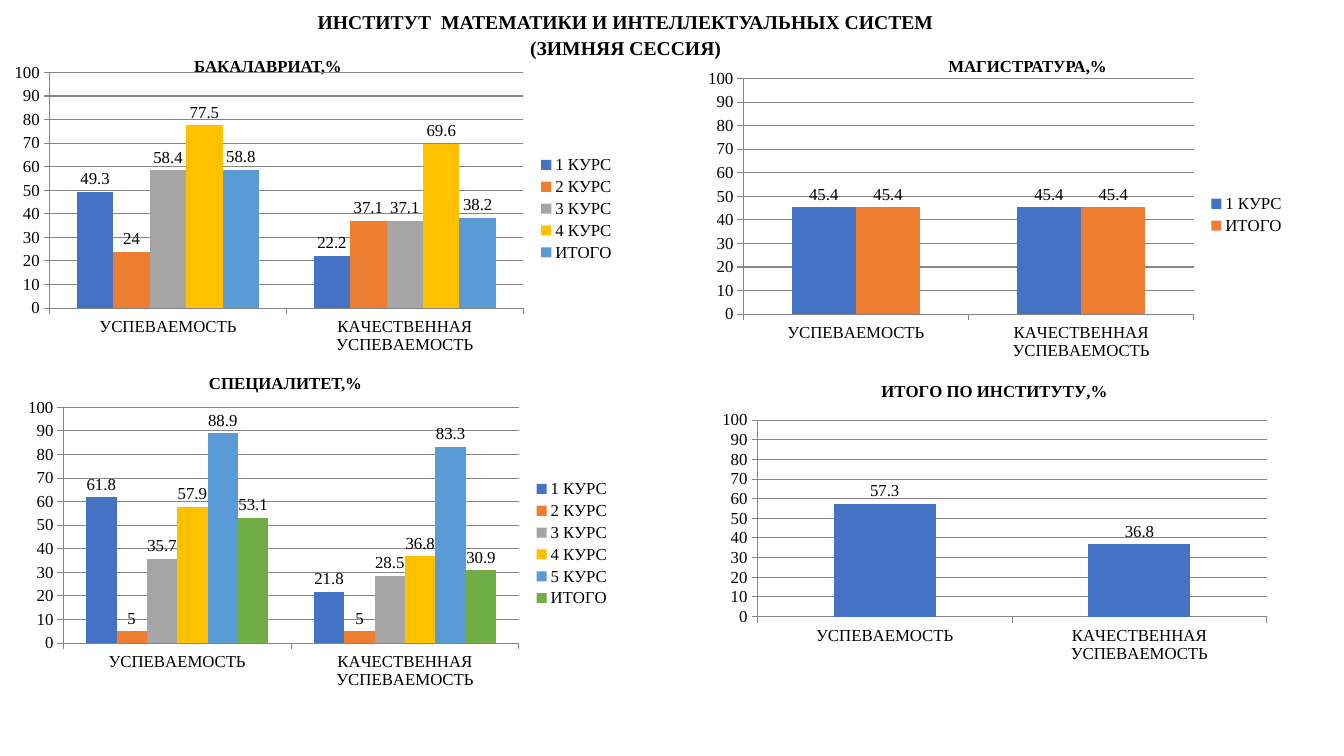
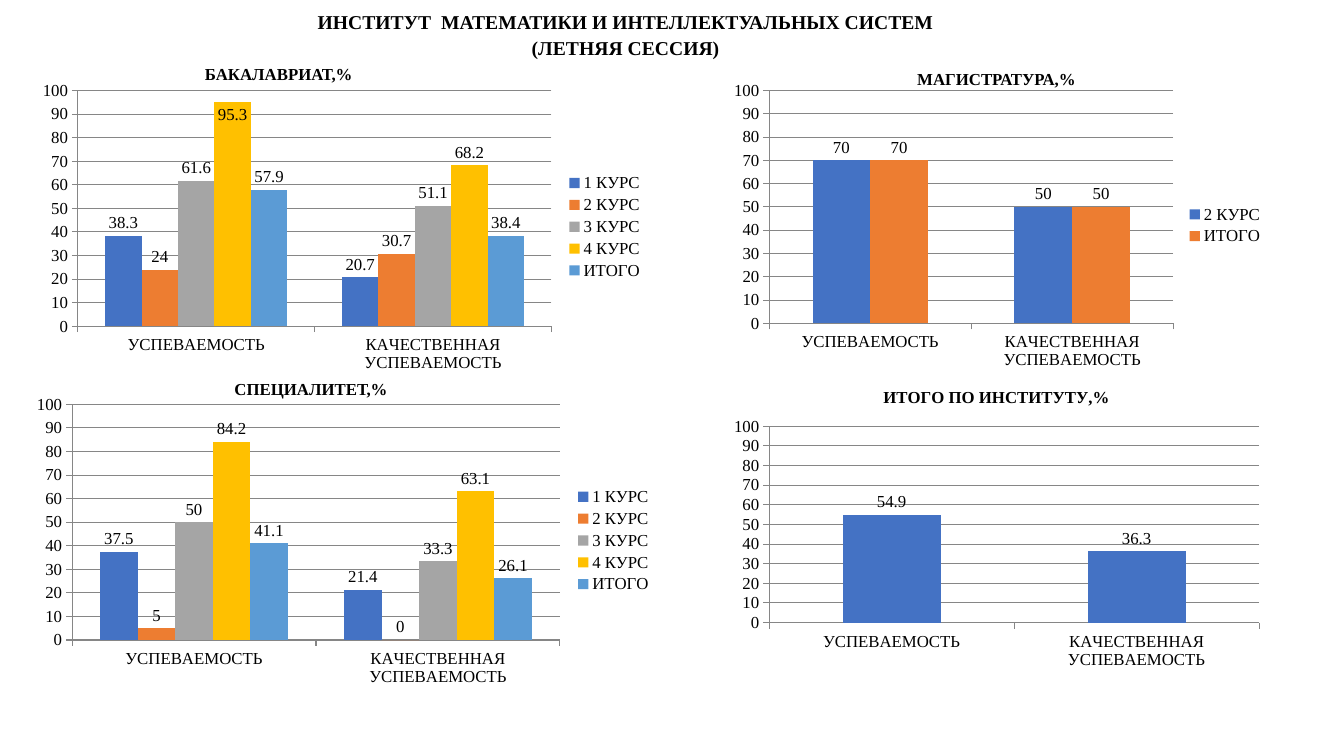
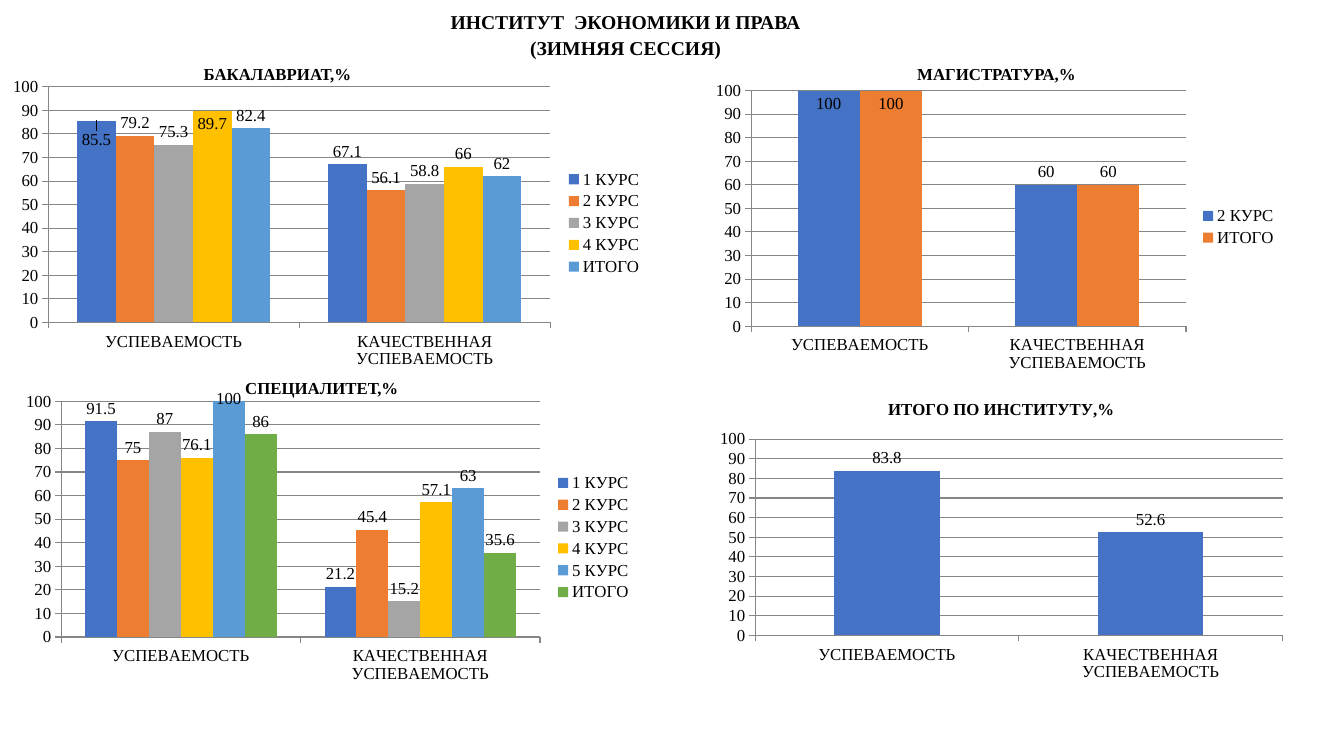
import dataclasses

import lxml.etree
import pptx
import pptx.chart.data
import pptx.dml.color
import pptx.enum.chart
import pptx.enum.text
import pptx.oxml.ns
import pptx.util


@dataclasses.dataclass(frozen=True)
class Theme:
    font: str = "Times New Roman"
    title_size: int = 14
    body_size: int = 12
    line_spacing: float = 1.07
    text: str = "000000"
    grid: str = "868686"
    series: tuple = ("4472C4", "ED7D31", "A5A5A5", "FFC000", "5B9BD5", "70AD47")


theme = Theme()
rgb = pptx.dml.color.RGBColor.from_string
center = pptx.enum.text.PP_ALIGN.CENTER
right = pptx.enum.text.PP_ALIGN.RIGHT

# Deck and grid: 100 columns by 100 rows
deck = pptx.Presentation()
deck.slide_width = pptx.util.Inches(13.33)
deck.slide_height = pptx.util.Inches(7.5)
column = deck.slide_width / 100
row = deck.slide_height / 100

# Shared wording and measures
categories = ("УСПЕВАЕМОСТЬ", "КАЧЕСТВЕННАЯ УСПЕВАЕМОСТЬ")
bachelor, master, specialist = "БАКАЛАВРИАТ,%", "МАГИСТРАТУРА,%", "СПЕЦИАЛИТЕТ,%"
overall = "ИТОГО ПО ИНСТИТУТУ,%"
total = "ИТОГО"
first, second, third, fourth, fifth = [f"{year} КУРС" for year in range(1, 6)]
four_years = (first, second, third, fourth, total)
five_years = (first, second, third, fourth, fifth, total)
title_area = (18.9, 0.5, 55.3, 7)
caption_size = (21.3, 3.5)
math_institute = "ИНСТИТУТ  МАТЕМАТИКИ И ИНТЕЛЛЕКТУАЛЬНЫХ СИСТЕМ"
law_institute = "ИНСТИТУТ  ЭКОНОМИКИ И ПРАВА"
winter, summer = "(ЗИМНЯЯ СЕССИЯ)", "(ЛЕТНЯЯ СЕССИЯ)"

# Captions: text, left, top, alignment
# Charts: area, series names, values per category, inside labels {series: shift down}
reports = [
    {
        "title": (math_institute, winter),
        "captions": [(bachelor, 9.3, 6.5, center), (master, 61.8, 6.5, right),
                     (specialist, 10.6, 48.4, center)],
        "charts": [
            ((0.15, 7.6, 46.4, 40), four_years,
             [(49.3, 24, 58.4, 77.5, 58.8), (22.2, 37.1, 37.1, 69.6, 38.2)], {}),
            ((1.2, 51.9, 45, 40), five_years,
             [(61.8, 5, 35.7, 57.9, 88.9, 53.1), (21.8, 5, 28.5, 36.8, 83.3, 30.9)], {}),
            ((51.8, 8.4, 44.6, 40), (first, total), [(45.4, 45.4), (45.4, 45.4)], {}),
            ((52.9, 48.4, 42.2, 40), ("Series 1",), [(57.3,), (36.8,)], {}),
        ],
    },
    {
        "title": (math_institute, summer),
        "captions": [(bachelor, 10.1, 7.6, center), (master, 63.5, 8.3, center),
                     (specialist, 12.5, 49.2, center)],
        "charts": [
            ((2.25, 10, 46.4, 40), four_years,
             [(38.3, 24, 61.6, 95.3, 57.9), (20.7, 30.7, 51.1, 68.2, 38.4)], {fourth: 0}),
            ((1.8, 51.5, 47.5, 40), four_years,
             [(37.5, 5, 50, 84.2, 41.1), (21.4, 0, 33.3, 63.1, 26.1)], {}),
            ((53.8, 10, 41, 39.6), (second, total), [(70, 70), (50, 50)], {}),
            ((53.8, 49.2, 40.7, 40), ("Series 1",), [(54.9,), (36.3,)], {}),
        ],
    },
    {
        "title": (law_institute, winter),
        "captions": [(bachelor, 10, 7.6, center), (master, 63.5, 7.6, center),
                     (specialist, 13.3, 49.1, center)],
        "charts": [
            ((0, 9.5, 48.6, 40), four_years,
             [(85.5, 79.2, 75.3, 89.7, 82.4), (67.1, 56.1, 58.8, 66, 62)],
             {first: 0.02, fourth: 0}),
            ((1, 51.1, 46.8, 40), five_years,
             [(91.5, 75, 87, 76.1, 100, 86), (21.2, 45.4, 15.2, 57.1, 63, 35.6)],
             {fifth: -0.05}),
            ((52.4, 10, 43.4, 40), (second, total), [(100, 100), (60, 60)],
             {second: 0, total: 0}),
            ((52.7, 50.9, 43.6, 40), ("Series 1",), [(83.8,), (52.6,)], {}),
        ],
    },
]


def place(left, top, width, height):
    return [round(length) for length in (left * column, top * row, width * column, height * row)]


def add_heading(page, area, lines, size, alignment):
    frame = page.shapes.add_textbox(*place(*area)).text_frame
    frame.word_wrap = True
    frame.text = "\n".join(lines)
    for para in frame.paragraphs:
        para.alignment = alignment
        para.line_spacing = theme.line_spacing
        para.font.name = theme.font
        para.font.size = pptx.util.Pt(size)
        para.font.bold = True
        para.font.color.rgb = rgb(theme.text)


for report in reports:
    page = deck.slides.add_slide(deck.slide_layouts[6])

    # Title and captions
    add_heading(page, title_area, report["title"], theme.title_size, center)
    for caption, left, top, alignment in report["captions"]:
        add_heading(page, (left, top, *caption_size), [caption], theme.body_size, alignment)

    for area, names, values, inside_labels in report["charts"]:
        data = pptx.chart.data.CategoryChartData()
        data.categories = categories
        for name, results in zip(names, zip(*values)):
            data.add_series(name, results)
        chart = page.shapes.add_chart(
            pptx.enum.chart.XL_CHART_TYPE.COLUMN_CLUSTERED, *place(*area), data).chart
        chart.font.name = theme.font
        chart.font.size = pptx.util.Pt(theme.body_size)
        chart.font.color.rgb = rgb(theme.text)

        # Legend for several series, chart title for the overall result
        chart.has_legend = len(names) > 1
        chart.has_title = not chart.has_legend
        if chart.has_legend:
            chart.legend.position = pptx.enum.chart.XL_LEGEND_POSITION.RIGHT
            chart.legend.include_in_layout = False
        else:
            chart.chart_title.include_in_layout = False
            chart.chart_title.text_frame.text = overall
            title_font = chart.chart_title.text_frame.paragraphs[0].font
            title_font.name = theme.font
            title_font.size = pptx.util.Pt(theme.body_size)
            title_font.bold = True
            title_font.color.rgb = rgb(theme.text)

        # Axes
        scale = chart.value_axis
        scale.minimum_scale, scale.maximum_scale, scale.major_unit = 0, 100, 10
        scale.has_major_gridlines = True
        for line in (scale.format.line, scale.major_gridlines.format.line,
                     chart.category_axis.format.line):
            line.color.rgb = rgb(theme.grid)
            line.width = pptx.util.Pt(0.75)
        for axis in (scale, chart.category_axis):
            axis.major_tick_mark = pptx.enum.chart.XL_TICK_MARK.OUTSIDE

        # Columns and value labels
        plot = chart.plots[0]
        plot.gap_width = 150
        plot.overlap = 0
        plot.vary_by_categories = False
        for series, color in zip(plot.series, theme.series):
            series.format.fill.solid()
            series.format.fill.fore_color.rgb = rgb(color)
            series.data_labels.show_value = True
            series.data_labels.position = pptx.enum.chart.XL_LABEL_POSITION.OUTSIDE_END
            if series.name not in inside_labels:
                continue
            series.points[0].data_label.position = pptx.enum.chart.XL_LABEL_POSITION.INSIDE_END
            shift = inside_labels[series.name]
            if shift:
                qn = pptx.oxml.ns.qn
                layout = lxml.etree.Element(qn("c:layout"))
                manual = lxml.etree.SubElement(layout, qn("c:manualLayout"))
                for tag, offset in (("c:x", 0), ("c:y", shift)):
                    lxml.etree.SubElement(manual, qn(tag)).set("val", str(offset))
                label = series.data_labels._element.find(qn("c:dLbl"))
                label.find(qn("c:idx")).addnext(layout)

deck.save("out.pptx")
